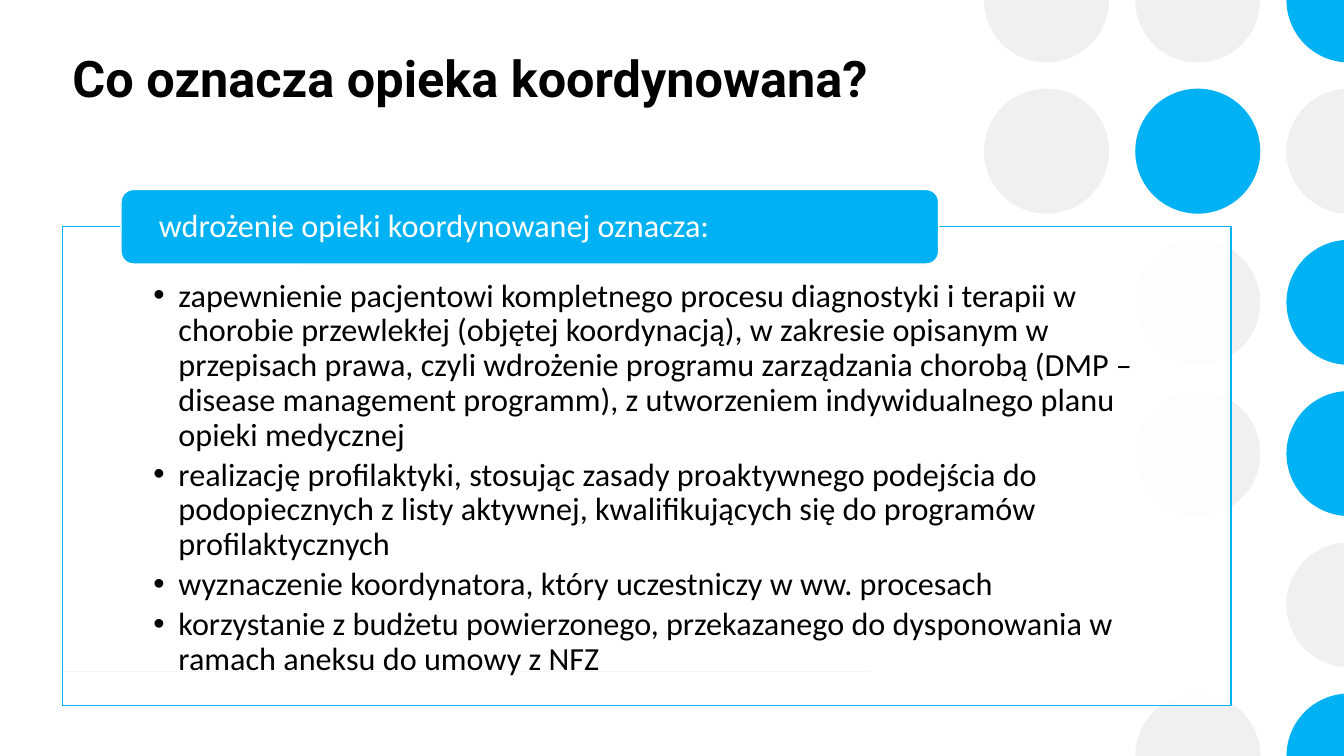
from math import acos, cos, degrees, radians, sin

from lxml.etree import SubElement
from pptx import Presentation
from pptx.dml.color import RGBColor
from pptx.enum.shapes import MSO_CONNECTOR, MSO_SHAPE
from pptx.enum.text import MSO_ANCHOR, PP_ALIGN
from pptx.oxml.ns import qn
from pptx.util import Inches, Pt

BLUE = RGBColor(0x00, 0xB2, 0xF3)
GREY = RGBColor(0xEF, 0xF0, 0xEF)
RULE_GREY = RGBColor(0xA6, 0xA6, 0xA6)
WHITE = RGBColor(0xFF, 0xFF, 0xFF)
BLACK = RGBColor(0x00, 0x00, 0x00)

TITLE = "Co oznacza opieka koordynowana?"
HEADING = "wdrożenie opieki koordynowanej oznacza:"
BULLETS = [
    "zapewnienie pacjentowi kompletnego procesu diagnostyki i terapii w chorobie "
    "przewlekłej (objętej koordynacją), w zakresie opisanym w przepisach prawa, czyli "
    "wdrożenie programu zarządzania chorobą (DMP – disease management programm), "
    "z utworzeniem indywidualnego planu opieki medycznej",
    "realizację profilaktyki, stosując zasady proaktywnego podejścia do podopiecznych "
    "z listy aktywnej, kwalifikujących się do programów profilaktycznych",
    "wyznaczenie koordynatora, który uczestniczy w ww. procesach",
    "korzystanie z budżetu powierzonego, przekazanego do dysponowania w ramach "
    "aneksu do umowy z NFZ",
]
CIRCLE_COLUMNS = [
    [GREY, GREY, None, None, None, None],
    [GREY, BLUE, GREY, GREY, None, GREY],
    [BLUE, GREY, BLUE, BLUE, GREY, BLUE],
]

SLIDE_WIDTH, SLIDE_HEIGHT = 13.33, 7.5
FIRST_CENTER_X, CIRCLE_STEP, RADIUS = 10.38, 1.5, 0.62
PANEL = (0.62, 2.25, 11.59, 4.75)
TAB = (1.2, 1.88, 8.11, 0.74)

presentation = Presentation()
presentation.slide_width = Inches(SLIDE_WIDTH)
presentation.slide_height = Inches(SLIDE_HEIGHT)
slide = presentation.slides.add_slide(presentation.slide_layouts[6])


def paint(shape, fill, line=None):
    shape.shadow.inherit = False
    shape.fill.solid()
    shape.fill.fore_color.rgb = fill
    if line is None:
        shape.line.fill.background()
    else:
        shape.line.color.rgb = line
        shape.line.width = Pt(1)


def add_preset(preset, box, fill, line=None):
    shape = slide.shapes.add_shape(preset, *map(Inches, box))
    paint(shape, fill, line)
    return shape


def add_cut_circle(center_x, center_y, color):
    left, right = center_x - RADIUS, min(center_x + RADIUS, SLIDE_WIDTH)
    top, bottom = max(center_y - RADIUS, 0), min(center_y + RADIUS, SLIDE_HEIGHT)
    cut_right = center_x + RADIUS > SLIDE_WIDTH
    cut_top, cut_bottom = center_y < RADIUS, center_y + RADIUS > SLIDE_HEIGHT
    edge = degrees(acos((SLIDE_WIDTH - center_x) / RADIUS)) if cut_right else 0
    start = 180 if cut_bottom else edge
    end = 180 if cut_top else 360 - edge

    corners = [(left, top), (right, top), (right, bottom), (left, bottom)]
    points = [(Inches(x), Inches(y)) for x, y in corners]
    builder = slide.shapes.build_freeform(*points[0])
    builder.add_line_segments(points[1:], close=True)
    shape = builder.convert_to_shape()
    paint(shape, color)

    outline = next(shape._element.iter(qn("a:path")))
    for segment in list(outline):
        outline.remove(segment)

    def add_point(command, x, y):
        point = SubElement(SubElement(outline, qn(command)), qn("a:pt"))
        point.set("x", str(Inches(x - left)))
        point.set("y", str(Inches(y - top)))

    angle = radians(start)
    add_point("a:moveTo", center_x + RADIUS * cos(angle), center_y + RADIUS * sin(angle))
    arc = SubElement(outline, qn("a:arcTo"))
    arc.set("wR", str(Inches(RADIUS)))
    arc.set("hR", str(Inches(RADIUS)))
    arc.set("stAng", str(round(start * 60000)))
    arc.set("swAng", str(round((end - start) * 60000)))
    if cut_right and (cut_top or cut_bottom):
        add_point("a:lnTo", right, top if cut_top else bottom)
    SubElement(outline, qn("a:close"))


def add_circle(center_x, center_y, color):
    inside_height = RADIUS <= center_y <= SLIDE_HEIGHT - RADIUS
    if inside_height and center_x + RADIUS <= SLIDE_WIDTH:
        box = (center_x - RADIUS, center_y - RADIUS, 2 * RADIUS, 2 * RADIUS)
        add_preset(MSO_SHAPE.OVAL, box, color)
    else:
        add_cut_circle(center_x, center_y, color)


def set_frame(shape, insets, anchor):
    frame = shape.text_frame
    frame.word_wrap = True
    frame.vertical_anchor = anchor
    frame.margin_left, frame.margin_top, frame.margin_right, frame.margin_bottom = map(Inches, insets)
    return frame


def add_run(paragraph, text, font, size, color, bold=False):
    paragraph.alignment = PP_ALIGN.LEFT
    run = paragraph.add_run()
    run.text = text
    run.font.name = font
    run.font.size = Pt(size)
    run.font.bold = bold
    run.font.color.rgb = color


def add_bullet(paragraph):
    properties = paragraph._p.get_or_add_pPr()
    properties.set("marL", str(Inches(0.25)))
    properties.set("indent", str(Inches(-0.25)))
    SubElement(properties, qn("a:buFont")).set("typeface", "Arial")
    SubElement(properties, qn("a:buChar")).set("char", "•")


for column, colors in enumerate(CIRCLE_COLUMNS):
    for row, color in enumerate(colors):
        if color is not None:
            add_circle(FIRST_CENTER_X + column * CIRCLE_STEP, row * CIRCLE_STEP, color)

rule = slide.shapes.add_connector(
    MSO_CONNECTOR.STRAIGHT, Inches(0.62), Inches(6.66), Inches(8.64), Inches(6.66)
)
rule.line.color.rgb = RULE_GREY
rule.line.width = Pt(1)
SubElement(rule._element.spPr, qn("a:effectLst"))

title = slide.shapes.add_textbox(*map(Inches, (0.62, 0.42, 9.53, 1.39)))
title_frame = set_frame(title, (0.1, 0.05, 0.1, 0.05), MSO_ANCHOR.TOP)
add_run(title_frame.paragraphs[0], TITLE, "Roboto", 36, BLACK, True)

panel = add_preset(MSO_SHAPE.RECTANGLE, PANEL, WHITE, BLUE)
panel_color = next(panel._element.spPr.iter(qn("a:srgbClr")))
SubElement(panel_color, qn("a:alpha")).set("val", "90000")
panel_frame = set_frame(panel, (0.9, 0.52, 0.9, 0.18), MSO_ANCHOR.TOP)
for index, text in enumerate(BULLETS):
    paragraph = panel_frame.paragraphs[0] if index == 0 else panel_frame.add_paragraph()
    paragraph.line_spacing = 0.9
    paragraph.space_after = Pt(3.8)
    add_bullet(paragraph)
    add_run(paragraph, text, "Calibri", 23, BLACK)

tab = add_preset(MSO_SHAPE.ROUNDED_RECTANGLE, TAB, BLUE, WHITE)
tab_frame = set_frame(tab, (0.34, 0, 0.34, 0), MSO_ANCHOR.MIDDLE)
tab_frame.paragraphs[0].line_spacing = 0.9
add_run(tab_frame.paragraphs[0], HEADING, "Calibri", 23, WHITE)

presentation.save("out.pptx")
